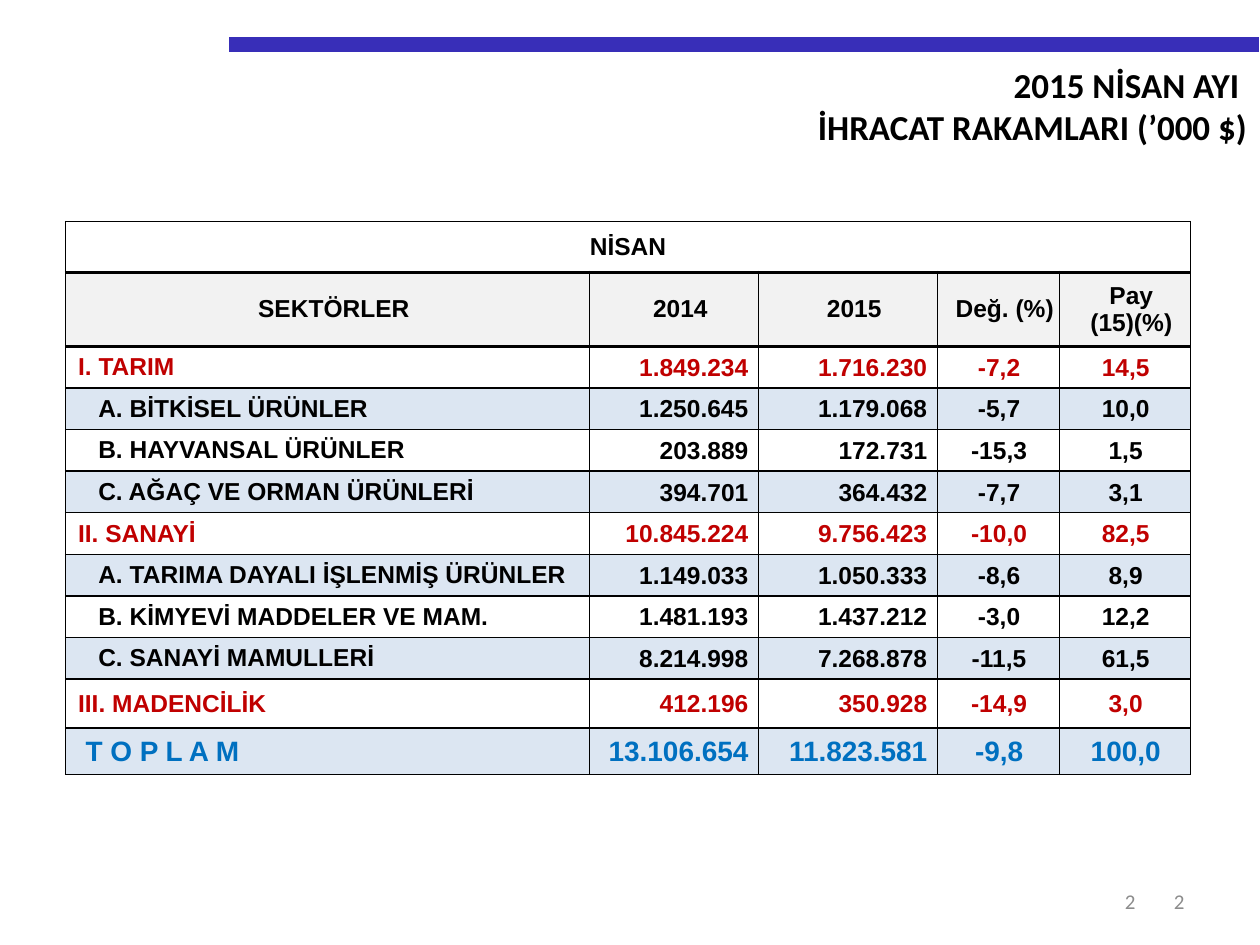
from dataclasses import dataclass

import lxml.etree
import pptx
import pptx.dml.color
import pptx.enum.shapes
import pptx.enum.text
import pptx.oxml.ns
import pptx.util

Inches = pptx.util.Inches
Pt = pptx.util.Pt
RGBColor = pptx.dml.color.RGBColor
Align = pptx.enum.text.PP_ALIGN
Anchor = pptx.enum.text.MSO_ANCHOR
qn = pptx.oxml.ns.qn

BLACK = RGBColor(0x00, 0x00, 0x00)
RED = RGBColor(0xC0, 0x00, 0x00)
BLUE = RGBColor(0x00, 0x70, 0xC0)
GRAY = RGBColor(0x8C, 0x8C, 0x8C)
BAR_COLOR = RGBColor(0x38, 0x2E, 0xB8)
HEADER_FILL = RGBColor(0xF2, 0xF2, 0xF2)
BAND_FILL = RGBColor(0xDC, 0xE6, 0xF2)

COLUMN_WIDTHS = (4.16, 1.34, 1.42, 0.97, 1.04)
HEADERS = ("SEKTÖRLER", "2014", "2015", "Değ. (%)", "Pay\n(15)(%)")

# Cell margins: left, top, right, bottom
LABEL_MARGINS = (0.1, 0.05, 0, 0.05)
AMOUNT_MARGINS = (0.01, 0.01, 0.08, 0)
PERCENT_MARGINS = (0.01, 0.01, 0, 0)
VALUE_STYLES = (
    (AMOUNT_MARGINS, Align.RIGHT),
    (AMOUNT_MARGINS, Align.RIGHT),
    (PERCENT_MARGINS, Align.CENTER),
    (PERCENT_MARGINS, Align.CENTER),
)


@dataclass
class SectorRow:
    label: str
    values: tuple[str, ...]
    color: RGBColor = BLACK
    fill: RGBColor | None = None
    indent: float = 0
    size: float = 14
    height: float = 0.33


def group(label: str, *values: str, height: float = 0.33) -> SectorRow:
    return SectorRow(label, values, color=RED, height=height)


def sector(label: str, *values: str, fill: RGBColor | None = None) -> SectorRow:
    return SectorRow(label, values, fill=fill, indent=0.16)


ROWS = (
    group("I. TARIM", "1.849.234", "1.716.230", "-7,2", "14,5"),
    sector("A. BİTKİSEL ÜRÜNLER", "1.250.645", "1.179.068", "-5,7", "10,0", fill=BAND_FILL),
    sector("B. HAYVANSAL ÜRÜNLER", "203.889", "172.731", "-15,3", "1,5"),
    sector("C. AĞAÇ VE ORMAN ÜRÜNLERİ", "394.701", "364.432", "-7,7", "3,1", fill=BAND_FILL),
    group("II. SANAYİ", "10.845.224", "9.756.423", "-10,0", "82,5"),
    sector("A. TARIMA DAYALI İŞLENMİŞ ÜRÜNLER", "1.149.033", "1.050.333", "-8,6", "8,9",
           fill=BAND_FILL),
    sector("B. KİMYEVİ MADDELER VE MAM.", "1.481.193", "1.437.212", "-3,0", "12,2"),
    sector("C. SANAYİ MAMULLERİ", "8.214.998", "7.268.878", "-11,5", "61,5", fill=BAND_FILL),
    group("III. MADENCİLİK", "412.196", "350.928", "-14,9", "3,0", height=0.39),
    SectorRow("T O P L A M", ("13.106.654", "11.823.581", "-9,8", "100,0"),
              color=BLUE, fill=BAND_FILL, indent=0.06, size=16, height=0.37),
)


def write_text(text_frame, text: str, *, size: float, font: str = "Arial",
               color: RGBColor = BLACK, bold: bool = True, align=Align.LEFT) -> None:
    """Write one paragraph for each line of text."""
    text_frame.word_wrap = True
    text_frame.text = text
    for paragraph in text_frame.paragraphs:
        paragraph.alignment = align
        paragraph.space_before = Pt(0)
        paragraph.font.name = font
        paragraph.font.size = Pt(size)
        paragraph.font.bold = bold
        paragraph.font.color.rgb = color


def set_borders(cell, *, top: float = 1, bottom: float = 1) -> None:
    properties = cell._tc.get_or_add_tcPr()
    for side, width in (("L", 1), ("R", 1), ("T", top), ("B", bottom)):
        line = lxml.etree.SubElement(properties, qn(f"a:ln{side}"), w=str(Pt(width)))
        fill = lxml.etree.SubElement(line, qn("a:solidFill"))
        lxml.etree.SubElement(fill, qn("a:srgbClr"), val=str(BLACK))


def format_cell(cell, text: str, *, margins: tuple[float, ...] = LABEL_MARGINS,
                fill: RGBColor | None = None, top: float = 1, bottom: float = 1,
                size: float = 14, color: RGBColor = BLACK, align=Align.CENTER) -> None:
    write_text(cell.text_frame, text, size=size, color=color, align=align)
    cell.vertical_anchor = Anchor.MIDDLE
    cell.margin_left, cell.margin_top, cell.margin_right, cell.margin_bottom = map(Inches, margins)
    set_borders(cell, top=top, bottom=bottom)
    if fill is None:
        cell.fill.background()
    else:
        cell.fill.solid()
        cell.fill.fore_color.rgb = fill


def add_title(slide) -> None:
    title = slide.shapes.title
    title.left, title.top, title.width, title.height = map(Inches, (1.06, 0.45, 8.94, 0.77))
    write_text(title.text_frame, "2015 NİSAN AYI \nİHRACAT RAKAMLARI (’000 $)",
               size=20, font="Calibri", align=Align.RIGHT)
    title.text_frame.auto_size = pptx.enum.text.MSO_AUTO_SIZE.NONE
    title.text_frame.vertical_anchor = Anchor.TOP


def add_bar(slide) -> None:
    bar = slide.shapes.add_connector(pptx.enum.shapes.MSO_CONNECTOR.STRAIGHT,
                                     Inches(1.82), Inches(0.35), Inches(9.99), Inches(0.35))
    bar.line.color.rgb = BAR_COLOR
    bar.line.width = Pt(8.5)
    lxml.etree.SubElement(bar._element.spPr, qn("a:effectLst"))


def add_page_number(slide, left: float, width: float) -> None:
    box = slide.shapes.add_textbox(Inches(left), Inches(6.95), Inches(width), Inches(0.4))
    write_text(box.text_frame, "2", size=12, font="Calibri", color=GRAY, bold=False,
               align=Align.RIGHT)
    box.text_frame.vertical_anchor = Anchor.MIDDLE


def add_export_table(slide) -> None:
    heights = (0.4, 0.59, *(row.height for row in ROWS))
    table = slide.shapes.add_table(
        len(heights), len(COLUMN_WIDTHS), Inches(0.52), Inches(1.76),
        Inches(sum(COLUMN_WIDTHS)), Inches(sum(heights))).table
    table.first_row = False
    table.horz_banding = False
    for column, width in zip(table.columns, COLUMN_WIDTHS):
        column.width = Inches(width)
    for table_row, height in zip(table.rows, heights):
        table_row.height = Inches(height)

    # Month heading across all columns
    for column in range(len(COLUMN_WIDTHS)):
        format_cell(table.cell(0, column), "NİSAN" if column == 0 else "",
                    margins=(0.1, 0.05, 0.1, 0.05), bottom=2)
    table.cell(0, 0).merge(table.cell(0, len(COLUMN_WIDTHS) - 1))

    # Column headings
    for column, header in enumerate(HEADERS):
        format_cell(table.cell(1, column), header, fill=HEADER_FILL, top=2, bottom=2)

    # Sectors and total
    for index, row in enumerate(ROWS, start=2):
        shared = dict(fill=row.fill, color=row.color, size=row.size, top=2 if index == 2 else 1)
        left, *other_margins = LABEL_MARGINS
        format_cell(table.cell(index, 0), row.label, margins=(left + row.indent, *other_margins),
                    align=Align.LEFT, **shared)
        for column, (value, style) in enumerate(zip(row.values, VALUE_STYLES), start=1):
            margins, align = style
            format_cell(table.cell(index, column), value, margins=margins, align=align, **shared)


def main() -> None:
    presentation = pptx.Presentation()
    presentation.slide_width = Inches(10)
    presentation.slide_height = Inches(7.5)
    slide = presentation.slides.add_slide(presentation.slide_layouts.get_by_name("Title Only"))
    add_bar(slide)
    add_title(slide)
    add_export_table(slide)
    add_page_number(slide, 7.17, 2.33)
    add_page_number(slide, 7.01, 2.1)
    presentation.save("out.pptx")


if __name__ == "__main__":
    main()
